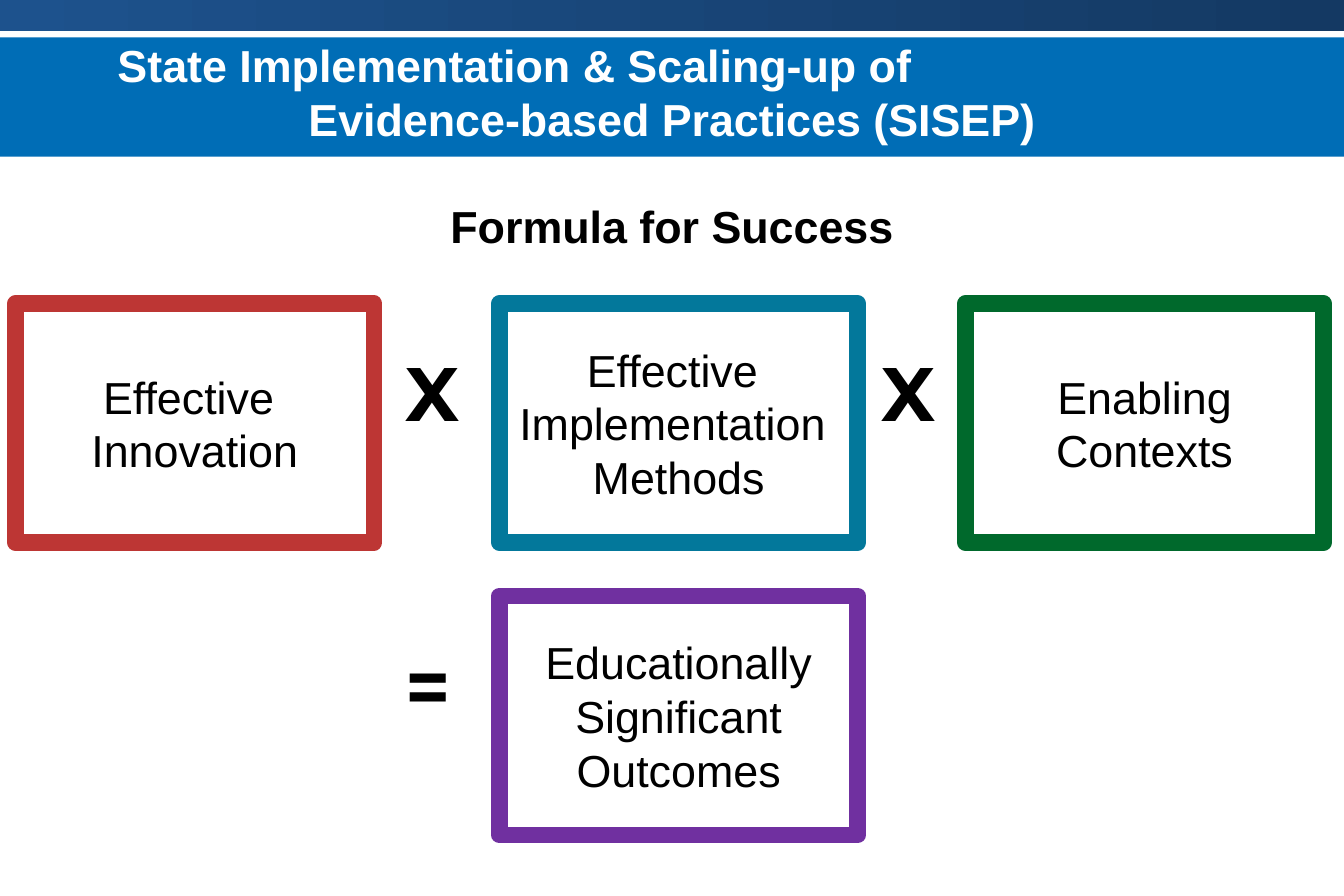
from dataclasses import dataclass

from pptx import Presentation
from pptx.dml.color import RGBColor
from pptx.enum.shapes import MSO_SHAPE
from pptx.enum.text import MSO_ANCHOR, MSO_AUTO_SIZE, PP_ALIGN
from pptx.util import Pt


@dataclass(frozen=True)
class Theme:
    font: str = "Arial"
    operator_font: str = "Montserrat"
    text_size: float = 27
    operator_size: float = 45.6
    black: str = "000000"
    white: str = "FFFFFF"
    band: str = "006DB6"
    strip_start: str = "1D528D"
    strip_end: str = "143963"
    red: str = "BD3634"
    teal: str = "03789B"
    green: str = "00692C"
    purple: str = "7030A0"


THEME = Theme()
SLIDE_W, SLIDE_H = 810, 540
BOX_W, BOX_H = 216, 144
FACTOR_TOP, OUTCOME_TOP = 183, 359.3
OPERATOR_DROP = 22

TERMS = [
    (9.4, FACTOR_TOP, THEME.red, ["Effective ", "Innovation"]),
    (301, FACTOR_TOP, THEME.teal, ["Effective ", "Implementation ", "Methods"]),
    (581.8, FACTOR_TOP, THEME.green, ["Enabling", "Contexts"]),
    (301, OUTCOME_TOP, THEME.purple, ["Educationally", "Significant", "Outcomes"]),
]
OPERATORS = [
    (237.6, FACTOR_TOP, 50.4, "X"),
    (524.2, FACTOR_TOP, 50.4, "X"),
    (237.6, OUTCOME_TOP, 44.6, "="),
]


def rgb(color):
    return RGBColor.from_string(color)


def write_lines(tf, lines, color, size=THEME.text_size, font=THEME.font,
                bold=False, align=PP_ALIGN.CENTER):
    for i, line in enumerate(lines):
        p = tf.paragraphs[0] if i == 0 else tf.add_paragraph()
        p.text = line
        p.alignment = align
        p.font.name = font
        p.font.size = Pt(size)
        p.font.bold = bold
        p.font.color.rgb = rgb(color)


def add_rect(slide, left, top, width, height):
    sp = slide.shapes.add_shape(
        MSO_SHAPE.RECTANGLE, Pt(left), Pt(top), Pt(width), Pt(height))
    sp.shadow.inherit = False
    return sp


def add_band(slide):
    sp = add_rect(slide, 0, 22.5, SLIDE_W, 72)
    sp.fill.solid()
    sp.fill.fore_color.rgb = rgb(THEME.band)
    sp.line.fill.background()


def add_strip(slide):
    sp = add_rect(slide, 0, 0, SLIDE_W, 18.8)
    sp.fill.gradient()
    sp.fill.gradient_angle = 0
    for stop, color in zip(sp.fill.gradient_stops,
                           (THEME.strip_start, THEME.strip_end)):
        stop.color.rgb = rgb(color)
    sp.line.fill.background()


def add_header(slide):
    sp = slide.shapes.add_textbox(0, Pt(21), Pt(SLIDE_W), Pt(68.4))
    tf = sp.text_frame
    tf.word_wrap = True
    tf.vertical_anchor = MSO_ANCHOR.MIDDLE
    tf.margin_left = tf.margin_right = Pt(5.8)
    tf.margin_top = tf.margin_bottom = Pt(2.9)
    write_lines(tf, ["State Implementation & Scaling-up of",
                     "Evidence-based Practices (SISEP)"], THEME.white, bold=True)
    p = tf.paragraphs[0]
    p.alignment = PP_ALIGN.LEFT
    pPr = p._p.get_or_add_pPr()
    pPr.set("marL", str(Pt(65)))
    pPr.set("indent", "0")


def set_title(slide, text):
    sp = slide.shapes.title
    sp.left, sp.top = Pt(0), Pt(101.5)
    sp.width, sp.height = Pt(SLIDE_W), Pt(68.4)
    tf = sp.text_frame
    tf.vertical_anchor = MSO_ANCHOR.MIDDLE
    write_lines(tf, [text], THEME.black, bold=True)


def add_term(slide, left, top, color, lines):
    sp = add_rect(slide, left, top, BOX_W, BOX_H)
    sp.fill.background()
    sp.line.color.rgb = rgb(color)
    sp.line.width = Pt(10)
    tf = sp.text_frame
    tf.word_wrap = False
    tf.vertical_anchor = MSO_ANCHOR.MIDDLE
    write_lines(tf, lines, THEME.black)


def add_operator(slide, left, row_top, width, symbol):
    sp = slide.shapes.add_textbox(
        Pt(left), Pt(row_top + OPERATOR_DROP), Pt(width), Pt(62.6))
    tf = sp.text_frame
    tf.word_wrap = False
    tf.auto_size = MSO_AUTO_SIZE.SHAPE_TO_FIT_TEXT
    write_lines(tf, [symbol], THEME.black, THEME.operator_size,
                THEME.operator_font, bold=True, align=PP_ALIGN.LEFT)


def main():
    prs = Presentation()
    prs.slide_width, prs.slide_height = Pt(SLIDE_W), Pt(SLIDE_H)
    s = prs.slides.add_slide(prs.slide_layouts.get_by_name("Title Only"))
    add_band(s)
    add_strip(s)
    add_header(s)
    set_title(s, "Formula for Success")
    for term in TERMS:
        add_term(s, *term)
    for operator in OPERATORS:
        add_operator(s, *operator)
    prs.save("out.pptx")


if __name__ == "__main__":
    main()
